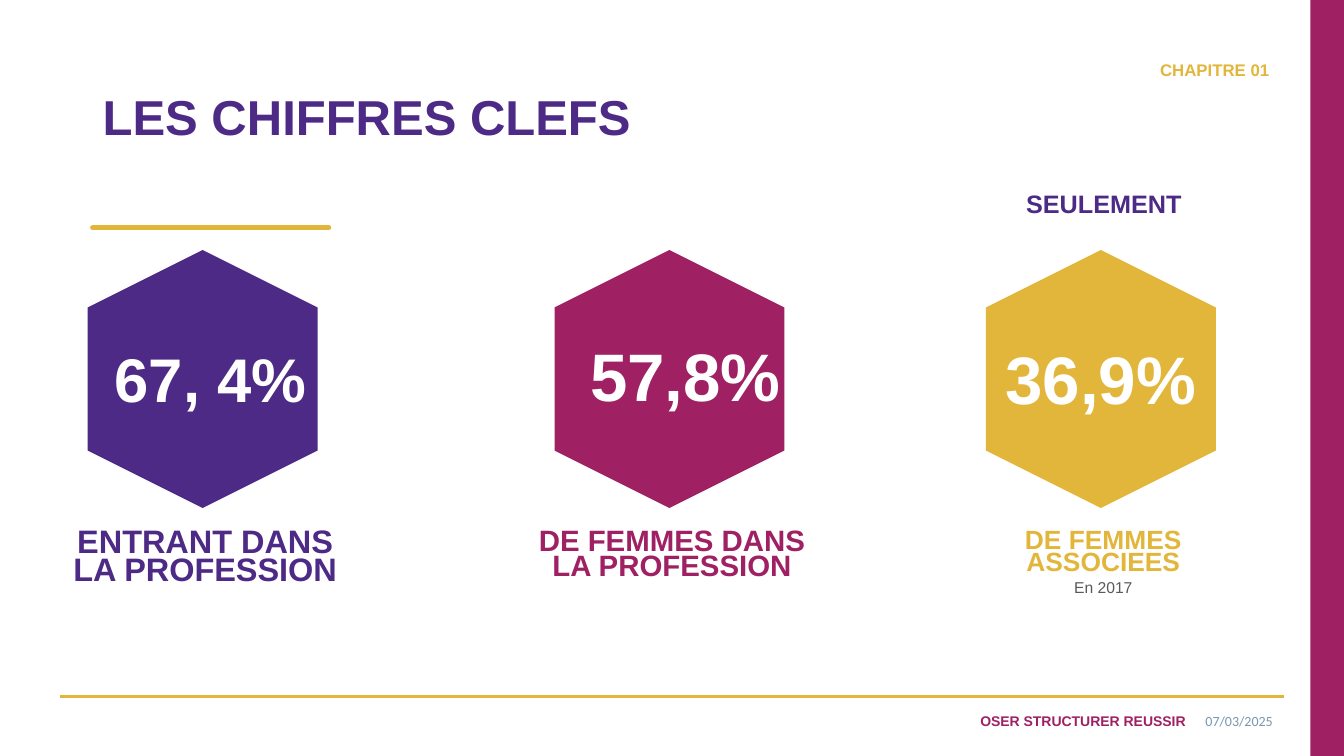
from dataclasses import dataclass

from lxml import etree
from pptx import Presentation
from pptx import util as u
from pptx.dml.color import RGBColor
from pptx.enum import shapes, text
from pptx.oxml.ns import qn


@dataclass(frozen=True)
class Theme:
    purple: str = "4D2A86"
    magenta: str = "9F2063"
    gold: str = "E2B63A"
    white: str = "FFFFFF"
    grey: str = "595959"
    blue_grey: str = "7897B0"
    font: str = "Arial"
    date_font: str = "Calibri"
    title: float = 35
    heading: float = 18
    chapter: float = 12
    note: float = 11.2
    footer: float = 10


THEME = Theme()
CENTER, RIGHT = text.PP_ALIGN.CENTER, text.PP_ALIGN.RIGHT
MIDDLE = text.MSO_ANCHOR.MIDDLE


class SlideBuilder:
    """Draws on one slide; every length is a percentage of the slide's size."""

    def __init__(self, deck, theme):
        self.deck, self.theme = deck, theme
        self.page = deck.slides.add_slide(deck.slide_layouts[6])

    def x(self, share):
        return u.Emu(round(self.deck.slide_width * share / 100))

    def y(self, share):
        return u.Emu(round(self.deck.slide_height * share / 100))

    def area(self, left, top, width, height):
        return self.x(left), self.y(top), self.x(width), self.y(height)

    def line(self, left, right, top, weight, cap="flat"):
        line = self.page.shapes.add_connector(
            shapes.MSO_CONNECTOR.STRAIGHT,
            self.x(left), self.y(top), self.x(right), self.y(top))
        line.line.color.rgb = RGBColor.from_string(self.theme.gold)
        line.line.width = u.Pt(weight)
        line._element.spPr.find(qn("a:ln")).set("cap", cap)
        etree.SubElement(line._element.spPr, qn("a:effectLst"))

    def shape(self, kind, area, fill, parent=None, rotation=0):
        shape = (parent or self.page).shapes.add_shape(kind, *self.area(*area))
        shape.shadow.inherit = False
        shape.fill.solid()
        shape.fill.fore_color.rgb = RGBColor.from_string(fill)
        shape.line.fill.background()
        shape.rotation = rotation
        return shape

    def textbox(self, area, words, size, color, frame=None, **formats):
        box = self.page.shapes.add_textbox(*self.area(*area))
        for name, value in {"word_wrap": True, **(frame or {})}.items():
            setattr(box.text_frame, name, value)
        self.fill_para(box.text_frame.paragraphs[0], words, size, color, **formats)

    def fill_para(self, para, words, size, color, bold=True, font=None, **formats):
        for name, value in formats.items():
            setattr(para, name, value)
        span = para.add_run()
        span.text = words
        style = {"size": u.Pt(size), "bold": bold, "name": font or self.theme.font}
        for name, value in style.items():
            setattr(span.font, name, value)
        span.font.color.rgb = RGBColor.from_string(color)

    def key_figure(self, left, color, caption, caption_size, value, value_size,
                   value_left, value_top, note=None):
        """Hexagon with its value inside and its caption below."""
        group = self.page.shapes.add_group_shape()
        label = self.shape(shapes.MSO_SHAPE.RECTANGLE, (left, 69.73, 22.13, 10.13),
                           self.theme.white, group)
        frame = label.text_frame
        frame.word_wrap = True
        frame.vertical_anchor = text.MSO_ANCHOR.TOP
        spacing = {"alignment": CENTER, "line_spacing": 0.7}
        self.fill_para(frame.paragraphs[0], caption, caption_size, color, **spacing)
        if note:
            self.fill_para(frame.add_paragraph(), note, self.theme.note,
                           self.theme.grey, bold=False, space_before=u.Pt(5),
                           **spacing)
        self.shape(shapes.MSO_SHAPE.HEXAGON, (left + 1.28, 34.93, 19.2, 30.4),
                   color, group, rotation=270)
        self.textbox((value_left, value_top, 17.1, 19.07), value, value_size,
                     self.theme.white, {"vertical_anchor": MIDDLE},
                     alignment=CENTER, line_spacing=0.9)


def main():
    deck = Presentation()
    deck.slide_width, deck.slide_height = u.Inches(13.33), u.Inches(7.5)
    slide = SlideBuilder(deck, THEME)

    slide.line(4.43, 95.55, 92.13, 1.75)
    slide.shape(shapes.MSO_SHAPE.RECTANGLE, (97.5, 0, 2.5, 100), THEME.magenta)
    slide.line(6.9, 24.45, 30.13, 3.75, cap="rnd")
    slide.textbox((85.58, 7.2, 9.68, 4), "CHAPITRE 01", THEME.chapter, THEME.gold,
                  {"word_wrap": False})
    slide.textbox((6.9, 11.73, 86.25, 14.13), "LES CHIFFRES CLEFS", THEME.title,
                  THEME.purple, line_spacing=0.9)
    slide.textbox((88.95, 92.67, 11.03, 5.33), "07/03/2025", THEME.footer,
                  THEME.blue_grey, {"vertical_anchor": MIDDLE},
                  bold=False, font=THEME.date_font)
    slide.textbox((55.2, 92.67, 33.75, 5.33), "OSER STRUCTURER REUSSIR", THEME.footer,
                  THEME.magenta, {"vertical_anchor": MIDDLE}, alignment=RIGHT)

    figures = [
        (38.93, THEME.magenta, "DE FEMMES DANS LA PROFESSION", 21,
         "57,8%", 48, 42.45, 40.67),
        (4.2, THEME.purple, "ENTRANT DANS LA PROFESSION", 23.2,
         "67, 4%", 44, 7.13, 41.07),
        (71.03, THEME.gold, "DE FEMMES ASSOCIEES", 18.8,
         "36,9%", 48, 73.35, 41.07, "En 2017"),
    ]
    for figure in figures:
        slide.key_figure(*figure)
    slide.textbox((68.1, 24.27, 50, 5.33), "SEULEMENT", THEME.heading, THEME.purple,
                  {"margin_left": slide.x(8.25)})

    deck.save("out.pptx")


if __name__ == "__main__":
    main()
